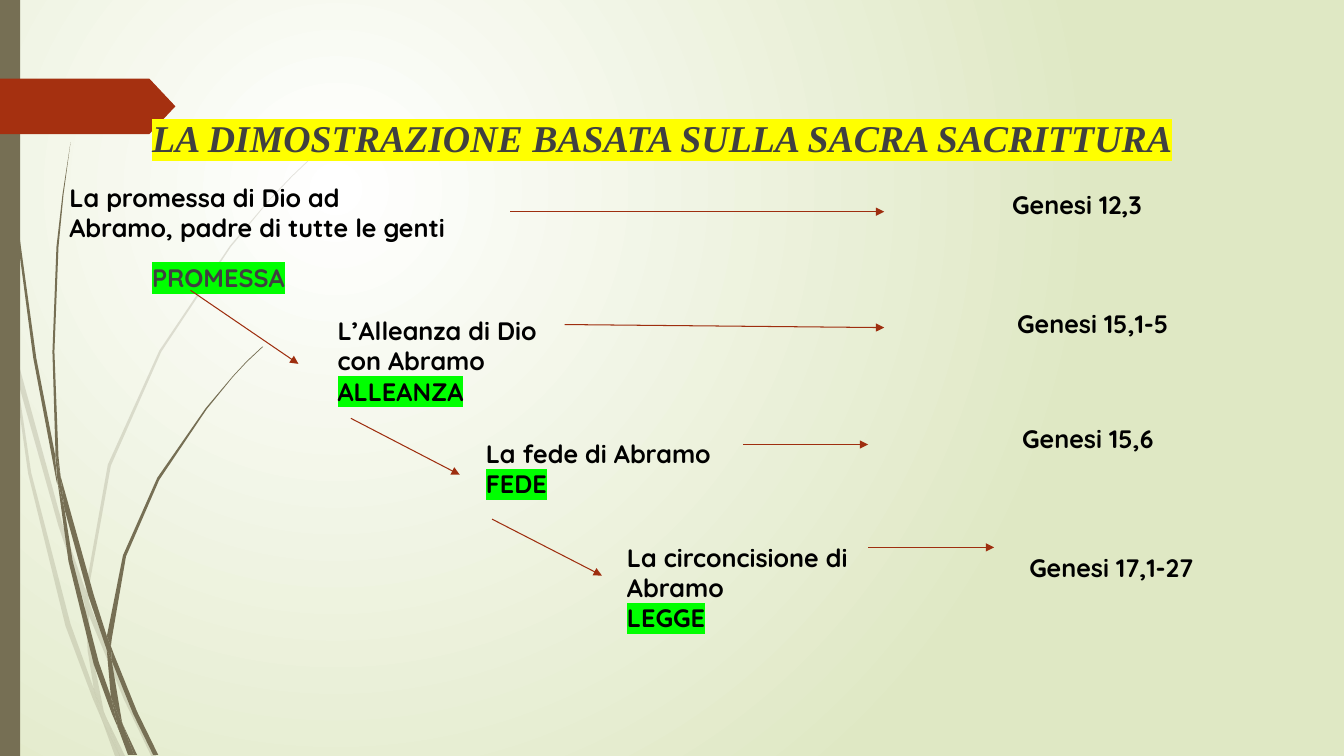
from dataclasses import dataclass

from lxml import etree
from pptx import Presentation
from pptx.dml.color import RGBColor
from pptx.enum import shapes, text
from pptx.oxml.ns import qn
from pptx.util import Inches, Pt


@dataclass(frozen=True)
class Theme:
    ground_in: str = "FFFFFF"
    ground_out: str = "DFE8C4"
    stem: str = "766F54"
    tag: str = "A53010"
    arrow: str = "9E2E0F"
    ink: str = "000000"
    grey: str = "404040"
    yellow: str = "FFFF00"
    green: str = "00FF00"
    title_font: str = "Times New Roman"
    body_font: str = "Quicksand"
    title_size: int = 27
    body_size: int = 18
    arrow_width: float = 0.75


THEME = Theme()

# Corner points of the blades that make up the grass.
PALE_BLADES = [
    [(.11, 3.5), (.09, 3.22), (0, 2.82), (0, 2.99), (.1, 3.44)],
    [(.58, 5.22), (.84, 5.99), (.85, 5.86), (.62, 5.2), (.14, 3.45), (.17, 3.76)],
    [(.92, 6.07), (.88, 5.96), (.88, 6.1), (1.23, 6.94), (1.5, 7.5), (1.55, 7.5), (1.27, 6.92)],
    [(1.19, 7.5), (1.24, 7.5), (1.05, 7.11)],
    [(.93, 6.83), (.7, 6.19), (.31, 4.69), (.17, 3.76), (.11, 3.5), (.28, 4.7), (.65, 6.21),
     (.92, 6.93), (1.01, 7.14), (.99, 7.07)],
    [(.84, 5.99), (.87, 6.46), (.93, 6.83), (.96, 6.92), (1.05, 7.11), (1.03, 7.06),
     (.91, 6.46), (.88, 6.1), (.88, 6.08)],
    [(.88, 5.84), (1.1, 4.62), (1.6, 3.49), (2.29, 2.45), (2.68, 1.98), (2.9, 1.75),
     (3.12, 1.54), (3.12, 1.53), (2.89, 1.75), (2.68, 1.97), (2.28, 2.44), (1.58, 3.48),
     (1.07, 4.61), (.85, 5.84), (.85, 5.86), (.88, 5.96)],
    [(1.01, 7.14), (1.14, 7.5), (1.19, 7.5)],
    [(.88, 6.08), (.88, 6.1), (.88, 5.96), (.85, 5.86), (.84, 5.99)],
    [(.96, 6.92), (.93, 6.83), (.99, 7.07), (1.01, 7.14), (1.19, 7.5), (1.05, 7.11)],
]
DARK_BLADES = [
    [(.07, 1.1), (.17, 2.33), (.33, 3.55), (.56, 4.77), (.57, 4.81), (.55, 4.57), (.55, 4.53),
     (.36, 3.55), (.19, 2.32), (.08, 1.09), (.05, .48), (.04, 0), (.03, 0), (.04, .48)],
    [(.88, 5.92), (1.06, 6.45), (1.06, 6.31), (.93, 5.9), (.6, 4.72), (.64, 5.05)],
    [(1.13, 6.49), (1.1, 6.41), (1.11, 6.56), (1.32, 7.08), (1.52, 7.49), (1.57, 7.49),
     (1.36, 7.06)],
    [(1.1, 6.91), (.98, 6.57), (.72, 5.56), (.64, 5.05), (.57, 4.77), (.68, 5.57), (.93, 6.59),
     (1.11, 7.08), (1.17, 7.22), (1.16, 7.17)],
    [(.6, 4.72), (.58, 4.53), (.54, 3.49), (.58, 2.45), (.63, 1.93), (.7, 1.41), (.62, 1.93),
     (.56, 2.45), (.52, 3.49), (.55, 4.49)],
    [(1.33, 7.49), (1.36, 7.49), (1.22, 7.19)],
    [(.57, 4.77), (.64, 5.05), (.6, 4.72), (.55, 4.49), (.55, 4.53)],
    [(1.11, 6.33), (1.25, 5.52), (1.58, 4.76), (2.05, 4.06), (2.31, 3.74), (2.45, 3.59),
     (2.61, 3.44), (2.6, 3.44), (2.45, 3.58), (2.31, 3.73), (2.04, 4.05), (1.56, 4.74),
     (1.22, 5.51), (1.06, 6.31), (1.1, 6.41)],
    [(1.17, 7.22), (1.27, 7.49), (1.31, 7.49)],
    [(1.06, 6.45), (1.1, 6.91), (1.16, 7.06), (1.22, 7.19), (1.21, 7.16), (1.11, 6.56),
     (1.09, 6.51)],
    [(1.06, 6.45), (1.09, 6.51), (1.11, 6.56), (1.1, 6.41), (1.06, 6.31)],
    [(1.16, 7.06), (1.1, 6.91), (1.16, 7.17), (1.17, 7.22), (1.3, 7.49), (1.33, 7.49),
     (1.22, 7.19)],
]

# Left, top, width, height, plain lines, highlighted keyword
STEPS = [
    (.59, 1.76, 3.97, .71, ["La promessa di Dio ad\vAbramo, padre di tutte le genti"], None),
    (3.25, 3.08, 3.07, 1.01, ["L’Alleanza di Dio", "con Abramo"], "ALLEANZA"),
    (4.72, 4.3, 2.49, .71, ["La fede di Abramo"], "FEDE"),
    (6.12, 5.33, 2.49, 1.31, ["La circoncisione di Abramo"], "LEGGE"),
]
REFERENCES = [
    (9.94, 1.83, "Genesi 12,3"),
    (9.99, 3.01, "Genesi 15,1-5"),
    (10.04, 4.15, "Genesi 15,6"),
    (10.11, 5.43, "Genesi 17,1-27"),
]
ARROWS = [
    (1.89, 2.88, 2.96, 3.61), (3.48, 4.15, 4.56, 4.71), (4.88, 5.15, 5.97, 5.71),
    (7.37, 4.41, 8.61, 4.41), (5.6, 3.22, 8.77, 3.25),
    (5.06, 2.1, 8.77, 2.1), (8.61, 5.43, 9.86, 5.43),
]


def rgb(value):
    return RGBColor.from_string(value)


def paint_background(s):
    fill = s.background.fill
    fill.gradient()
    for stop, color in zip(fill.gradient_stops, (THEME.ground_in, THEME.ground_out)):
        stop.color.rgb = rgb(color)
    lin = s.background._cSld.find(".//" + qn("a:lin"))
    circle = etree.Element(qn("a:path"), {"path": "circle"})
    etree.SubElement(circle, qn("a:fillToRect"),
                     {"l": "50000", "t": "50000", "r": "100000", "b": "100000"})
    lin.getparent().replace(lin, circle)


def paint(sp, color, opacity=100):
    sp.shadow.inherit = False
    sp.line.fill.background()
    sp.fill.solid()
    sp.fill.fore_color.rgb = rgb(color)
    if opacity < 100:
        clr = sp._element.spPr.find(".//" + qn("a:srgbClr"))
        etree.SubElement(clr, qn("a:alpha"), {"val": str(opacity * 1000)})


def add_blade(s, corners, opacity=100):
    outline = [(Inches(x), Inches(y)) for x, y in corners]
    builder = s.shapes.build_freeform(*outline[0])
    builder.add_line_segments(outline[1:], close=True)
    paint(builder.convert_to_shape(), THEME.stem, opacity)


def add_block(s, shape, left, top, width, height, color):
    sp = s.shapes.add_shape(shape, *map(Inches, (left, top, width, height)))
    paint(sp, color)
    return sp


def add_text_frame(s, left, top, width, height, lines):
    tf = s.shapes.add_textbox(*map(Inches, (left, top, width, height))).text_frame
    tf.word_wrap = True
    tf.vertical_anchor = text.MSO_ANCHOR.TOP
    tf.text = "\n".join(lines)
    return tf


def format_line(p, highlight=None, color=THEME.ink, font=THEME.body_font,
                size=THEME.body_size, italic=False):
    for r in p.runs:
        r.font.size, r.font.name = Pt(size), font
        r.font.bold, r.font.italic = True, italic
        r.font.color.rgb = rgb(color)
        if highlight:
            mark = etree.Element(qn("a:highlight"))
            etree.SubElement(mark, qn("a:srgbClr"), {"val": highlight})
            r._r.rPr.find(qn("a:latin")).addprevious(mark)


def add_heading(s):
    """The title with the first keyword below it, in one text box."""
    tf = add_text_frame(s, 1.41, 1.09, 11.12, 5.33,
                        ["LA DIMOSTRAZIONE BASATA SULLA SACRA SACRITTURA", "PROMESSA"])
    title, keyword = tf.paragraphs
    format_line(title, THEME.yellow, THEME.grey, THEME.title_font, THEME.title_size, italic=True)
    format_line(keyword, THEME.green, THEME.grey)
    keyword.space_before = Pt(73)


def add_step(s, left, top, width, height, lines, keyword=None):
    """Bold lines, then an optional highlighted keyword as the last line."""
    tf = add_text_frame(s, left, top, width, height, [*lines, keyword] if keyword else lines)
    for i, p in enumerate(tf.paragraphs):
        format_line(p, THEME.green if i == len(lines) else None)


def add_arrow(s, *ends):
    line = s.shapes.add_connector(shapes.MSO_CONNECTOR.STRAIGHT, *map(Inches, ends))
    line.line.color.rgb = rgb(THEME.arrow)
    line.line.width = Pt(THEME.arrow_width)
    etree.SubElement(line.line._get_or_add_ln(), qn("a:tailEnd"), {"type": "triangle"})
    etree.SubElement(line._element.spPr, qn("a:effectLst"))


def main():
    prs = Presentation()
    prs.slide_width, prs.slide_height = Inches(13.33), Inches(7.5)
    s = prs.slides.add_slide(prs.slide_layouts[6])
    paint_background(s)
    for corners in PALE_BLADES:
        add_blade(s, corners, opacity=20)
    for corners in DARK_BLADES:
        add_blade(s, corners)
    add_block(s, shapes.MSO_SHAPE.RECTANGLE, 0, 0, .2, 7.5, THEME.stem)
    tag = add_block(s, shapes.MSO_SHAPE.PENTAGON, 0, .78, 1.74, .55, THEME.tag)
    tag.adjustments[0] = .47

    add_heading(s)
    for step in STEPS:
        add_step(s, *step)
    for left, top, reference in REFERENCES:
        add_step(s, left, top, 2.59, .4, [reference])
    for ends in ARROWS:
        add_arrow(s, *ends)
    prs.save("out.pptx")


if __name__ == "__main__":
    main()
